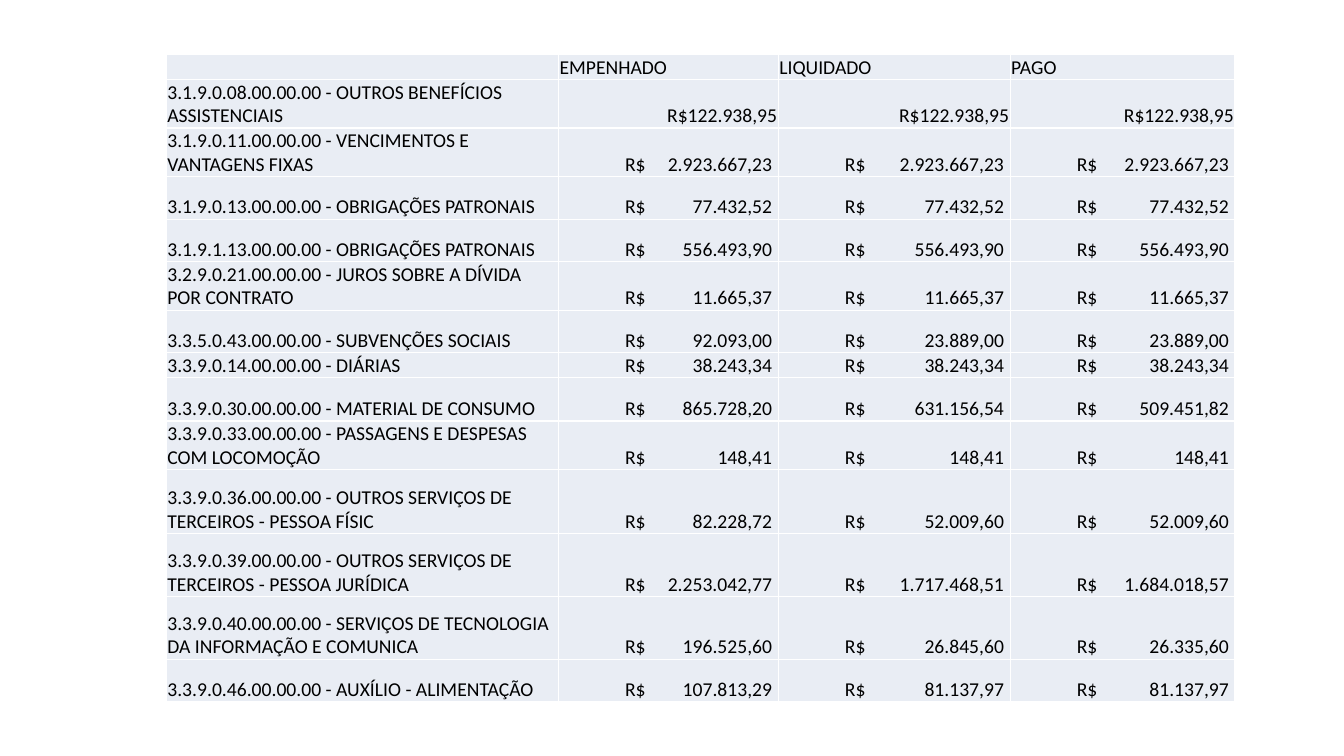
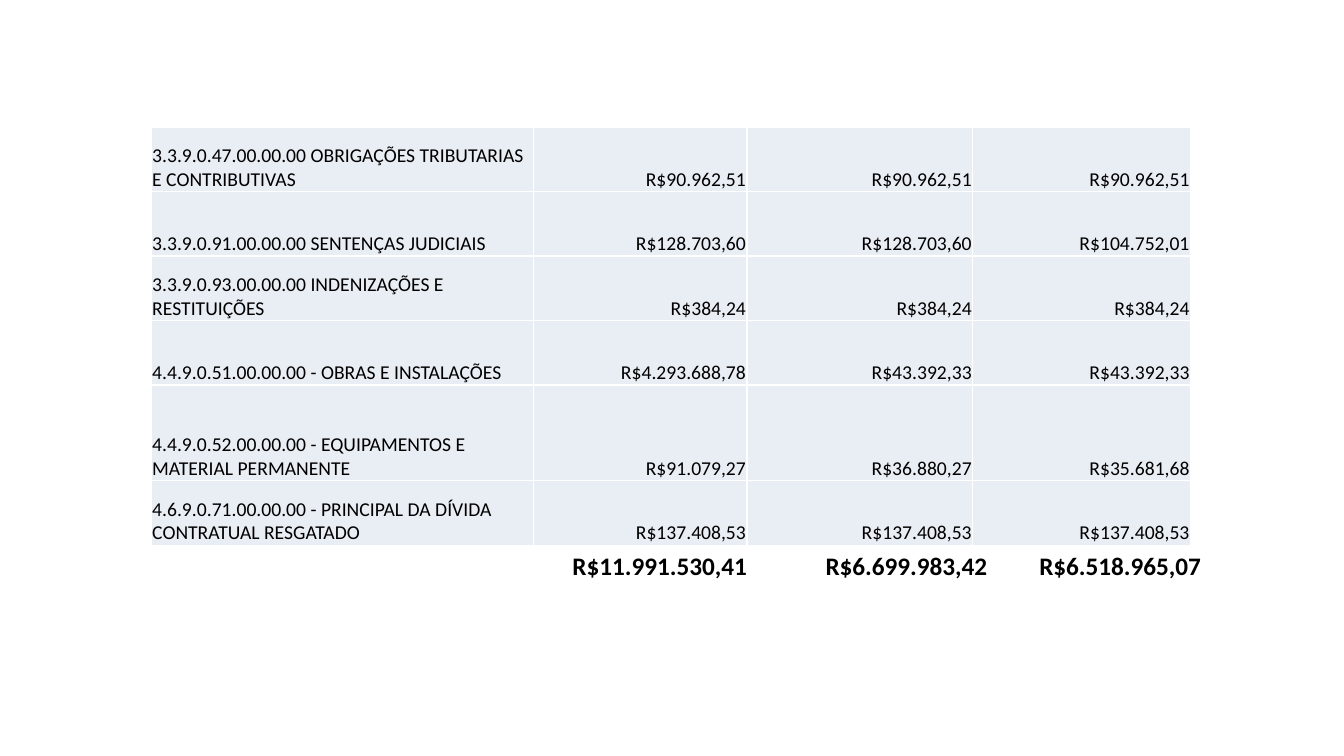
"""Build two slides of budget expenses by category."""
import lxml.etree
import pptx
import pptx.dml.color
import pptx.enum.text
import pptx.oxml.ns
import pptx.util

Inches = pptx.util.Inches
Pt = pptx.util.Pt
ALIGN = pptx.enum.text.PP_ALIGN
BLACK = pptx.dml.color.RGBColor(0, 0, 0)
WHITE = pptx.dml.color.RGBColor(255, 255, 255)
PALE = pptx.dml.color.RGBColor(0xE9, 0xED, 0xF4)
FONT = "Calibri"
INSET = 0.01
MARK = 0.65
TAIL = 0.07

FIRST = {
    "left": 1.65, "top": 0.54,
    "cols": [3.89, 2.18, 2.3, 2.23],
    "rows": [
        (0.24, "", "EMPENHADO", "LIQUIDADO", "PAGO"),
        (0.42, "3.1.9.0.08.00.00.00 - OUTROS BENEFÍCIOS ASSISTENCIAIS",
         "R$122.938,95", "R$122.938,95", "R$122.938,95"),
        (0.42, "3.1.9.0.11.00.00.00 - VENCIMENTOS E VANTAGENS FIXAS",
         "2.923.667,23", "2.923.667,23", "2.923.667,23"),
        (0.42, "3.1.9.0.13.00.00.00 - OBRIGAÇÕES PATRONAIS",
         "77.432,52", "77.432,52", "77.432,52"),
        (0.42, "3.1.9.1.13.00.00.00 - OBRIGAÇÕES PATRONAIS",
         "556.493,90", "556.493,90", "556.493,90"),
        (0.42, "3.2.9.0.21.00.00.00 - JUROS SOBRE A DÍVIDA POR CONTRATO",
         "11.665,37", "11.665,37", "11.665,37"),
        (0.42, "3.3.5.0.43.00.00.00 - SUBVENÇÕES SOCIAIS",
         "92.093,00", "23.889,00", "23.889,00"),
        (0.25, "3.3.9.0.14.00.00.00 - DIÁRIAS",
         "38.243,34", "38.243,34", "38.243,34"),
        (0.43, "3.3.9.0.30.00.00.00 - MATERIAL DE CONSUMO",
         "865.728,20", "631.156,54", "509.451,82"),
        (0.42, "3.3.9.0.33.00.00.00 - PASSAGENS E DESPESAS COM LOCOMOÇÃO",
         "148,41", "148,41", "148,41"),
        (0.63, "3.3.9.0.36.00.00.00 - OUTROS SERVIÇOS DE TERCEIROS - PESSOA FÍSIC",
         "82.228,72", "52.009,60", "52.009,60"),
        (0.63, "3.3.9.0.39.00.00.00 - OUTROS SERVIÇOS DE TERCEIROS - PESSOA JURÍDICA",
         "2.253.042,77", "1.717.468,51", "1.684.018,57"),
        (0.62, "3.3.9.0.40.00.00.00 - SERVIÇOS DE TECNOLOGIA DA INFORMAÇÃO E COMUNICA",
         "196.525,60", "26.845,60", "26.335,60"),
        (0.42, "3.3.9.0.46.00.00.00 - AUXÍLIO - ALIMENTAÇÃO",
         "107.813,29", "81.137,97", "81.137,97"),
    ],
}
SECOND = {
    "left": 1.5, "top": 1.26,
    "cols": [3.79, 2.12, 2.24, 2.16],
    "rows": [
        (0.64, "3.3.9.0.47.00.00.00 OBRIGAÇÕES TRIBUTARIAS E CONTRIBUTIVAS",
         "R$90.962,51", "R$90.962,51", "R$90.962,51"),
        (0.64, "3.3.9.0.91.00.00.00 SENTENÇAS JUDICIAIS",
         "R$128.703,60", "R$128.703,60", "R$104.752,01"),
        (0.64, "3.3.9.0.93.00.00.00 INDENIZAÇÕES E RESTITUIÇÕES",
         "R$384,24", "R$384,24", "R$384,24"),
        (0.64, "4.4.9.0.51.00.00.00 - OBRAS E INSTALAÇÕES",
         "R$4.293.688,78", "R$43.392,33", "R$43.392,33"),
        (0.95, "4.4.9.0.52.00.00.00 - EQUIPAMENTOS E MATERIAL PERMANENTE",
         "R$91.079,27", "R$36.880,27", "R$35.681,68"),
        (0.64, "4.6.9.0.71.00.00.00 - PRINCIPAL DA DÍVIDA CONTRATUAL RESGATADO",
         "R$137.408,53", "R$137.408,53", "R$137.408,53"),
    ],
}
TOTALS = ["R$11.991.530,41", "R$6.699.983,42", "R$6.518.965,07"]
STOPS = [(2.51, "l"), (4.63, "l")]


def add_xml(parent, tag, **attrs):
    return lxml.etree.SubElement(parent, pptx.oxml.ns.qn(tag), attrs)


def set_tabs(para, stops):
    tabs = add_xml(para._p.get_or_add_pPr(), "a:tabLst")
    for place, side in stops:
        add_xml(tabs, "a:tab", pos=str(Inches(place)), algn=side)


def style(para, size, bold=False):
    for run in para.runs:
        run.font.name = FONT
        run.font.size = Pt(size)
        run.font.bold = bold
        run.font.color.rgb = BLACK
    if not para.runs:
        add_xml(para._p, "a:endParaRPr", sz=str(size * 100))


def add_edges(cell):
    props = cell._tc.get_or_add_tcPr()
    for side in ("L", "R", "T", "B"):
        line = add_xml(props, f"a:ln{side}", w=str(Pt(1)))
        add_xml(add_xml(line, "a:solidFill"), "a:srgbClr", val=str(WHITE))


def fill_cell(cell, text, amount, width):
    add_edges(cell)
    cell.fill.solid()
    cell.fill.fore_color.rgb = PALE
    cell.vertical_anchor = pptx.enum.text.MSO_ANCHOR.BOTTOM
    cell.margin_left = cell.margin_right = cell.margin_top = Inches(INSET)
    cell.margin_bottom = 0
    para = cell.text_frame.paragraphs[0]
    ledger = amount and text[0].isdigit()
    para.text = f"\tR$\t{text}" if ledger else text
    if ledger:
        set_tabs(para, [(MARK, "l"), (width - TAIL, "r")])
    elif amount and text.startswith("R$"):
        para.alignment = ALIGN.RIGHT
    style(para, 14)


def add_costs(slide, data):
    cols, rows = data["cols"], data["rows"]
    high = sum(row[0] for row in rows)
    frame = slide.shapes.add_table(
        len(rows), len(cols), Inches(data["left"]), Inches(data["top"]),
        Inches(sum(cols)), Inches(high))
    table = frame.table
    table.first_row = table.horz_banding = False
    for col, width in zip(table.columns, cols):
        col.width = Inches(width)
    for r, (height, *texts) in enumerate(rows):
        table.rows[r].height = Inches(height)
        for c, text in enumerate(texts):
            fill_cell(table.cell(r, c), text, c > 0, cols[c])


def add_totals(slide):
    box = slide.shapes.add_textbox(
        Inches(5.58), Inches(5.41), Inches(6.54), Inches(0.4))
    box.text_frame.word_wrap = True
    para = box.text_frame.paragraphs[0]
    para.text = "\t".join(TOTALS)
    set_tabs(para, STOPS)
    style(para, 18, True)


def main():
    deck = pptx.Presentation()
    deck.slide_width, deck.slide_height = Inches(13.33), Inches(7.5)
    for data in (FIRST, SECOND):
        slide = deck.slides.add_slide(deck.slide_layouts[6])
        add_costs(slide, data)
    add_totals(slide)
    deck.save("out.pptx")


if __name__ == "__main__":
    main()
